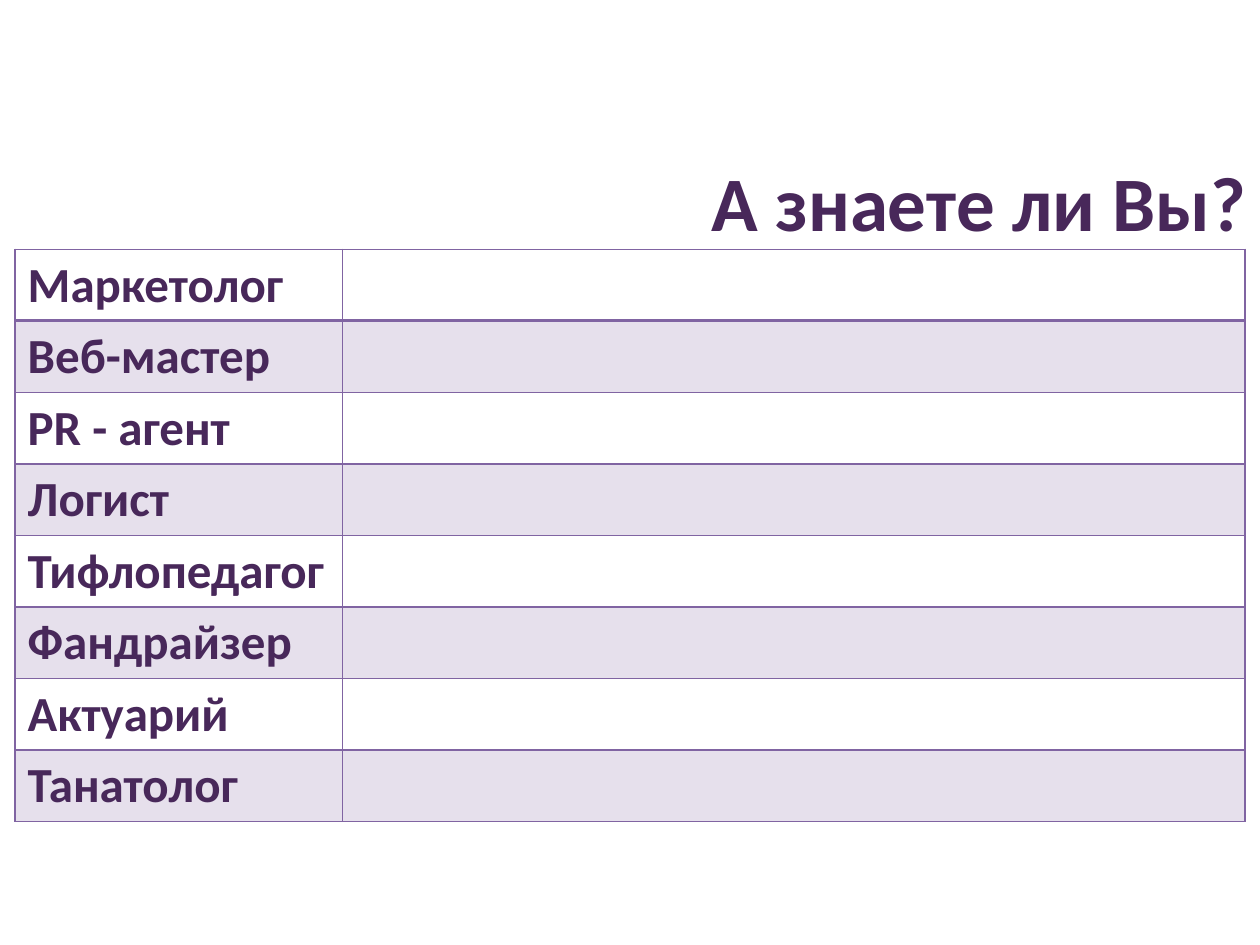
from lxml.etree import SubElement
from pptx import Presentation
from pptx.dml.color import RGBColor as RGB
from pptx.enum.text import MSO_ANCHOR as Anchor, MSO_AUTO_SIZE as AutoSize, PP_ALIGN as Align
from pptx.oxml.ns import qn
from pptx.util import Inches, Pt

COLORS = {"text": "48285A", "border": "8064A2", "band": "E6E0EC"}
PROFESSIONS = ["Маркетолог", "Веб-мастер", "PR - агент", "Логист",
               "Тифлопедагог", "Фандрайзер", "Актуарий", "Танатолог"]
COLUMN_WIDTHS = [2.6, 7.16]
TABLE_LEFT, TABLE_TOP, TABLE_HEIGHT = 0.12, 1.98, 4.53


def style_text(paragraph, size):
    for run in paragraph.runs:
        run.font.name = "Calibri"
        run.font.size = Pt(size)
        run.font.bold = True
        run.font.color.rgb = RGB.from_string(COLORS["text"])


def add_title(slide):
    title = slide.shapes.title
    title.left, title.top = Inches(5.5), Inches(1.18)
    title.width, title.height = Inches(4.5), Inches(0.84)
    frame = title.text_frame
    frame.text = "А знаете ли Вы?"
    frame.word_wrap = False
    frame.auto_size = AutoSize.SHAPE_TO_FIT_TEXT
    frame.vertical_anchor = Anchor.TOP
    frame.paragraphs[0].alignment = Align.RIGHT
    style_text(frame.paragraphs[0], 44)


def set_borders(cell, top, bottom):
    properties = cell._tc.get_or_add_tcPr()
    for side, width in (("L", 1), ("R", 1), ("T", top), ("B", bottom)):
        border = SubElement(properties, qn(f"a:ln{side}"), w=str(Pt(width)))
        fill = SubElement(border, qn("a:solidFill"))
        SubElement(fill, qn("a:srgbClr"), val=COLORS["border"])


def format_cell(cell, row):
    set_borders(cell, 2 if row == 1 else 1, 2 if row == 0 else 1)
    if row % 2:
        cell.fill.solid()
        cell.fill.fore_color.rgb = RGB.from_string(COLORS["band"])
    else:
        cell.fill.background()


def add_professions(slide):
    table = slide.shapes.add_table(
        len(PROFESSIONS), len(COLUMN_WIDTHS), Inches(TABLE_LEFT), Inches(TABLE_TOP),
        Inches(sum(COLUMN_WIDTHS)), Inches(TABLE_HEIGHT)).table
    for column, width in zip(table.columns, COLUMN_WIDTHS):
        column.width = Inches(width)
    for row, profession in enumerate(PROFESSIONS):
        name_cell = table.cell(row, 0)
        name_cell.text_frame.text = profession
        style_text(name_cell.text_frame.paragraphs[0], 28)
        for column in range(len(COLUMN_WIDTHS)):
            format_cell(table.cell(row, column), row)


def main():
    deck = Presentation()
    deck.slide_width, deck.slide_height = Inches(10), Inches(7.5)
    slide = deck.slides.add_slide(deck.slide_layouts[5])
    add_title(slide)
    add_professions(slide)
    deck.save("out.pptx")


if __name__ == "__main__":
    main()
